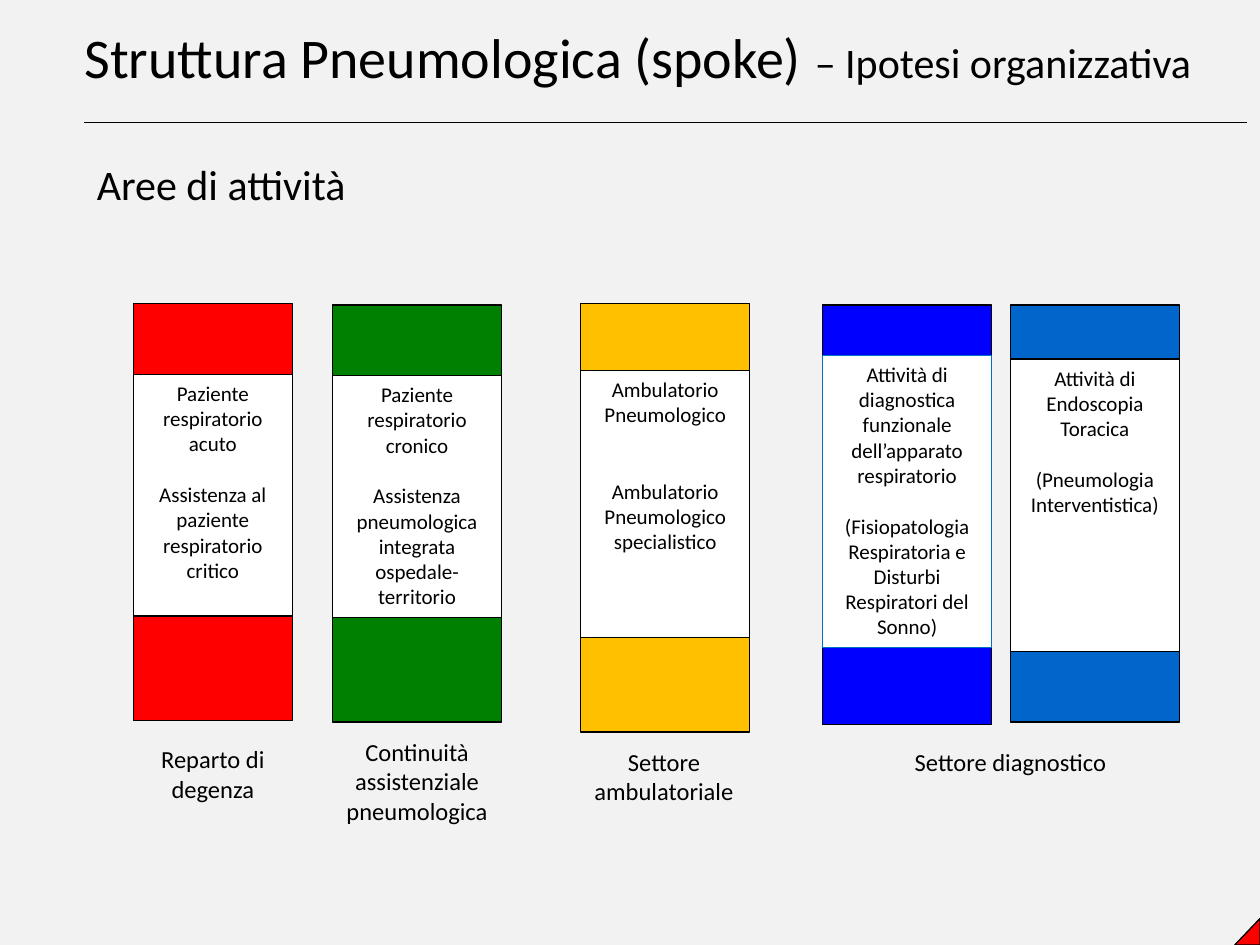
from lxml import etree
from pptx import Presentation
from pptx import util as u
from pptx.dml.color import RGBColor
from pptx.enum import shapes, text
from pptx.oxml.ns import qn

FONT = "Calibri"
COLORS = {"ground": "F2F2F2", "ink": "000000", "white": "FFFFFF",
          "red": "FF0000", "green": "008000", "amber": "FFC000",
          "blue": "0000FF", "azure": "0066CC", "rim": "0070C0"}

# Content
TITLE = (("Struttura Pneumologica (spoke) ", 32), ("– Ipotesi organizzativa", 24))
SUBTITLE = "Aree di attività"

# Pillar: colour, (left, top, width, height), panel (top, height), panel rim,
# and groups of paragraphs
PILLARS = [
    ("red", (1.06, 2.41, 1.26, 3.31), (2.97, 1.92), "ink",
     [["Paziente respiratorio acuto"],
      ["Assistenza al paziente respiratorio critico"]]),
    ("green", (2.64, 2.42, 1.34, 3.31), (2.98, 1.92), "ink",
     [["Paziente respiratorio cronico"],
      ["Assistenza pneumologica integrata", "ospedale-territorio"]]),
    ("amber", (4.61, 2.41, 1.34, 3.4), (2.94, 2.12), "ink",
     [["Ambulatorio", "Pneumologico"],
      ["Ambulatorio", "Pneumologico", "specialistico"]]),
    ("blue", (6.53, 2.42, 1.34, 3.33), (2.82, 2.32), "rim",
     [["Attività di diagnostica funzionale dell’apparato respiratorio"],
      ["(Fisiopatologia Respiratoria e Disturbi Respiratori del Sonno)"]]),
    ("azure", (8.02, 2.42, 1.34, 3.31), (2.85, 2.32), "ink",
     [["Attività di Endoscopia Toracica"],
      ["(Pneumologia Interventistica)"]]),
]
LINE_PT = 14.65                      # height of one 12 pt line
GROUP_GAPS = {"amber": 2}            # gap between groups in lines, else 1

CAPTIONS = [
    ("Reparto di degenza", (1.06, 5.86, 1.26, 0.57)),
    ("Continuità assistenziale pneumologica", (2.55, 5.8, 1.52, 0.81)),
    ("Settore ambulatoriale", (4.52, 5.88, 1.5, 0.57)),
    ("Settore diagnostico", (6.74, 5.88, 2.56, 0.34)),
]


def rgb(name):
    return RGBColor.from_string(COLORS[name])


def inches(box):
    return [u.Inches(length) for length in box]


def format_runs(paragraph, size):
    for run in paragraph.runs:
        run.font.name, run.font.size = FONT, u.Pt(size)
        run.font.color.rgb = rgb("ink")


def add_block(slide, kind, box, fill, rim="ink"):
    block = slide.shapes.add_shape(kind, *inches(box))
    block.shadow.inherit = False
    block.fill.solid()
    block.fill.fore_color.rgb = rgb(fill)
    block.line.color.rgb = rgb(rim)
    block.line.width = u.Pt(0.75)
    return block


def add_label(slide, words, box, size, align):
    frame = slide.shapes.add_textbox(*inches(box)).text_frame
    frame.word_wrap = True
    frame.text = words
    frame.paragraphs[0].alignment = align
    format_runs(frame.paragraphs[0], size)
    return frame


def fill_panel(frame, groups, gap):
    frame.word_wrap = True
    frame.vertical_anchor = text.MSO_ANCHOR.TOP
    frame.text = "\n".join(line for group in groups for line in group)
    for paragraph in frame.paragraphs:
        paragraph.alignment = text.PP_ALIGN.CENTER
        format_runs(paragraph, 12)
    frame.paragraphs[len(groups[0])].space_before = u.Pt(gap * LINE_PT)


def main():
    deck = Presentation()
    deck.slide_width, deck.slide_height = u.Inches(10), u.Inches(7.5)
    slide = deck.slides.add_slide(deck.slide_layouts[5])
    slide.background.fill.solid()
    slide.background.fill.fore_color.rgb = rgb("ground")

    # Title and rule
    title = slide.shapes.title
    title.left, title.top, title.width, title.height = inches((0.67, 0.13, 9.33, 0.64))
    heading = title.text_frame
    heading.margin_left = heading.margin_right = 0
    heading.vertical_anchor = text.MSO_ANCHOR.TOP
    heading.auto_size = text.MSO_AUTO_SIZE.NONE
    heading.paragraphs[0].alignment = text.PP_ALIGN.LEFT
    for words, size in TITLE:
        run = heading.paragraphs[0].add_run()
        run.text = words
        run.font.name, run.font.size = FONT, u.Pt(size)
        run.font.color.rgb = rgb("ink")
    rule = slide.shapes.add_connector(shapes.MSO_CONNECTOR.STRAIGHT,
                                      *inches((0.67, 0.97, 9.9, 0.97)))
    rule.line.color.rgb = rgb("ink")
    rule.line.width = u.Pt(0.75)
    etree.SubElement(rule._element.spPr, qn("a:effectLst"))

    # Subtitle
    subtitle = add_label(slide, SUBTITLE, (0.67, 1.07, 9.33, 0.61), 24,
                         text.PP_ALIGN.LEFT)
    subtitle.vertical_anchor = text.MSO_ANCHOR.MIDDLE
    subtitle.paragraphs[0].line_spacing = 1.4

    # Pillars with their white panels
    rectangle = shapes.MSO_SHAPE.RECTANGLE
    for color, box, (top, height), rim, groups in PILLARS:
        add_block(slide, rectangle, box, color)
        panel = add_block(slide, rectangle, (box[0], top, box[2], height), "white", rim)
        fill_panel(panel.text_frame, groups, GROUP_GAPS.get(color, 1))

    # Captions under the pillars
    for words, box in CAPTIONS:
        add_label(slide, words, box, 14, text.PP_ALIGN.CENTER)

    # Corner mark
    corner = add_block(slide, shapes.MSO_SHAPE.RIGHT_TRIANGLE,
                       (9.8, 7.29, 0.2, 0.21), "red")
    corner._element.spPr.find(qn("a:xfrm")).set("flipH", "1")

    deck.save("out.pptx")


if __name__ == "__main__":
    main()
